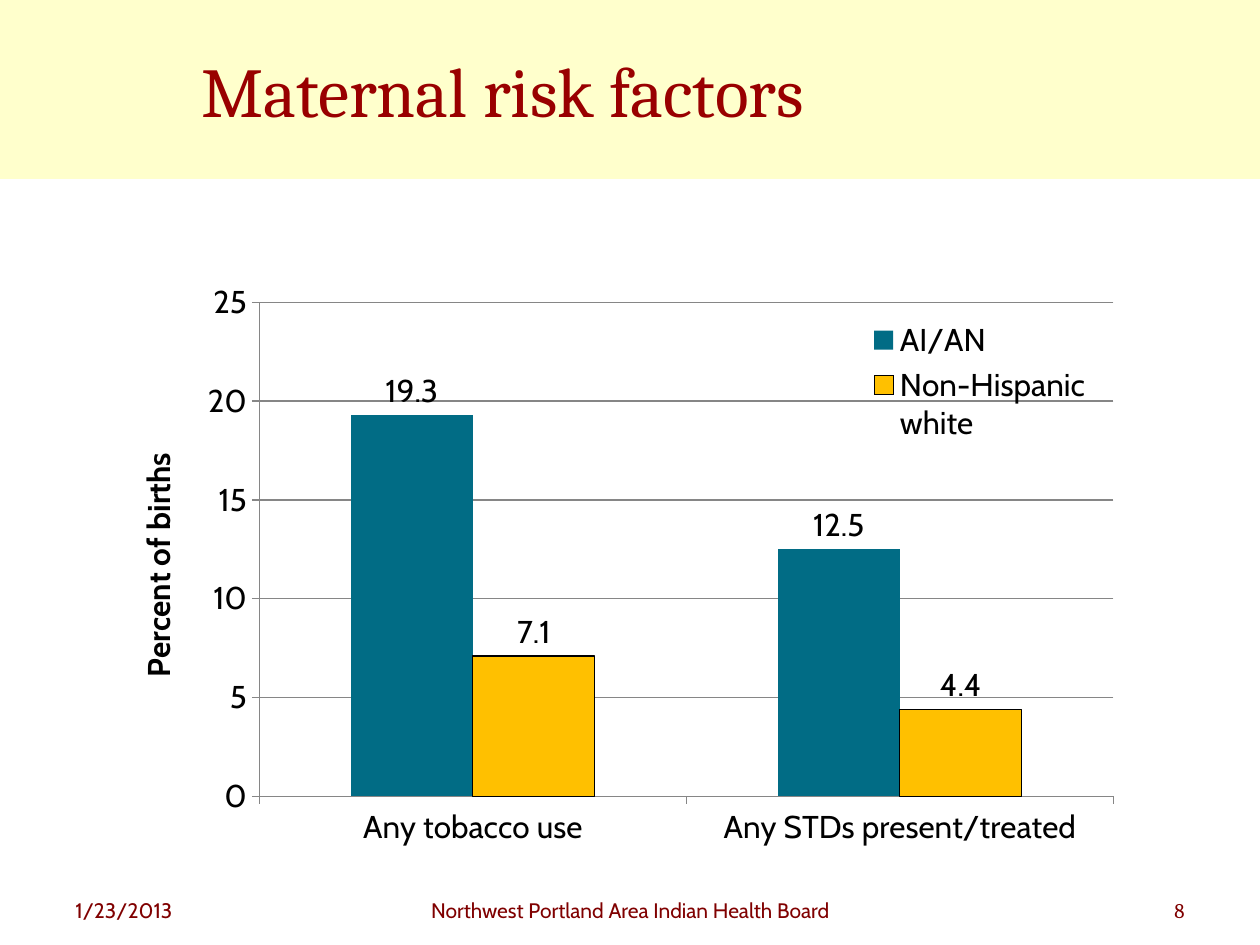
import dataclasses

import pptx
import pptx.chart.data
import pptx.dml.color
import pptx.enum.chart
import pptx.enum.shapes
import pptx.enum.text
import pptx.oxml
import pptx.oxml.ns
import pptx.util

PX_PER_INCH = 126
ALIGN = pptx.enum.text.PP_ALIGN
ANCHOR = pptx.enum.text.MSO_ANCHOR
CHART = pptx.enum.chart


@dataclasses.dataclass(frozen=True)
class Theme:
    band: str = "FFFFCC"
    title: str = "990000"
    footer: str = "800000"
    ink: str = "000000"
    grid: str = "868686"
    native: str = "016C85"
    white: str = "FFC000"
    heading_font: str = "Cambria"
    body_font: str = "Cabin"
    title_size: int = 40
    chart_size: int = 18
    footer_size: int = 12


THEME = Theme()


def px(length):
    return pptx.util.Emu(round(length * 914400 / PX_PER_INCH))


def rgb(value):
    return pptx.dml.color.RGBColor.from_string(value)


def set_all(target, values):
    for name, value in values.items():
        setattr(target, name, value)


def style_font(font, face, size, color, bold=False):
    set_all(font, {"name": face, "size": pptx.util.Pt(size), "bold": bold})
    font.color.rgb = rgb(color)


def style_line(line, color):
    line.color.rgb = rgb(color)
    line.width = pptx.util.Pt(0.75)


def add_band(slide, box):
    band = slide.shapes.add_shape(
        pptx.enum.shapes.MSO_SHAPE.RECTANGLE, *map(px, box))
    band.shadow.inherit = False
    band.fill.solid()
    band.fill.fore_color.rgb = rgb(THEME.band)
    band.line.fill.background()


def add_text(slide, box, text, face, size, color,
             align=ALIGN.LEFT, anchor=ANCHOR.TOP):
    frame = slide.shapes.add_textbox(*map(px, box)).text_frame
    set_all(frame, {"word_wrap": True, "vertical_anchor": anchor})
    paragraph = frame.paragraphs[0]
    set_all(paragraph, {"text": text, "alignment": align})
    style_font(paragraph.runs[0].font, face, size, color)


def place(part, index, x, y, w, h, inner=False):
    """Give a chart part a fixed place, as fractions of the chart."""
    for old in part.findall(pptx.oxml.ns.qn("c:layout")):
        part.remove(old)
    values = {"xMode": "edge", "yMode": "edge", "x": x, "y": y, "w": w, "h": h}
    if inner:
        values = {"layoutTarget": "inner", **values}
    fields = "".join(f'<c:{k} val="{v}"/>' for k, v in values.items())
    part.insert(index, pptx.oxml.parse_xml(
        f'<c:layout {pptx.oxml.ns.nsdecls("c")}>'
        f'<c:manualLayout>{fields}</c:manualLayout></c:layout>'))


def style_axes(chart):
    percent, factors = chart.value_axis, chart.category_axis
    for axis in (percent, factors):
        set_all(axis, {"major_tick_mark": CHART.XL_TICK_MARK.OUTSIDE,
                       "minor_tick_mark": CHART.XL_TICK_MARK.NONE})
        style_line(axis.format.line, THEME.grid)
    set_all(percent, {"minimum_scale": 0, "maximum_scale": 25,
                      "major_unit": 5, "has_major_gridlines": True})
    style_line(percent.major_gridlines.format.line, THEME.grid)
    set_all(percent.tick_labels, {"number_format": "0",
                                  "number_format_is_linked": False})
    caption = percent.axis_title.text_frame.paragraphs[0]
    caption.text = "Percent of births"
    style_font(caption.runs[0].font, THEME.body_font, THEME.chart_size,
               THEME.ink, bold=True)


def style_series(series, color, outline):
    series.invert_if_negative = False
    series.format.fill.solid()
    series.format.fill.fore_color.rgb = rgb(color)
    if outline:
        style_line(series.format.line, outline)
    else:
        series.format.line.fill.background()
    set_all(series.data_labels, {
        "show_value": True, "number_format": "0.0",
        "number_format_is_linked": False,
        "position": CHART.XL_LABEL_POSITION.OUTSIDE_END})


def add_risk_chart(slide, box):
    groups = [("AI/AN", (19.3, 12.5), THEME.native, None),
              ("Non-Hispanic white", (7.1, 4.4), THEME.white, THEME.ink)]
    births = pptx.chart.data.CategoryChartData(number_format="0.0")
    births.categories = ["Any tobacco use", "Any STDs present/treated"]
    for name, values, _, _ in groups:
        births.add_series(name, values)
    chart = slide.shapes.add_chart(
        CHART.XL_CHART_TYPE.COLUMN_CLUSTERED, *map(px, box), births).chart
    set_all(chart, {"has_title": False, "has_legend": True})
    style_font(chart.font, THEME.body_font, THEME.chart_size, THEME.ink)

    # Columns
    columns = chart.plots[0]
    set_all(columns, {"gap_width": 150, "overlap": 0,
                      "vary_by_categories": False})
    for series, (_, _, color, outline) in zip(columns.series, groups):
        style_series(series, color, outline)
    style_axes(chart)

    # Legend over the plot
    set_all(chart.legend, {"position": CHART.XL_LEGEND_POSITION.RIGHT,
                           "include_in_layout": True})
    legend = chart.element.find(".//" + pptx.oxml.ns.qn("c:legend"))
    place(legend, 1, 0.73, 0.07, 0.24, 0.23)
    plot_area = chart.element.find(".//" + pptx.oxml.ns.qn("c:plotArea"))
    place(plot_area, 0, 0.15, 0.05, 0.83, 0.84, inner=True)


def main():
    deck = pptx.Presentation()
    set_all(deck, {"slide_width": px(1260), "slide_height": px(945)})
    slide = deck.slides.add_slide(deck.slide_layouts[6])

    # Heading
    add_band(slide, (0, 0, 1260, 179))
    add_text(slide, (189, 10, 1008, 158), "Maternal risk factors",
             THEME.heading_font, THEME.title_size, THEME.title,
             anchor=ANCHOR.MIDDLE)

    # Chart
    add_risk_chart(slide, (105, 273, 1029, 588))

    # Footer
    footer = [
        (63, 294, "1/23/2013", THEME.body_font, ALIGN.LEFT),
        (368, 525, "Northwest Portland Area Indian Health Board",
         THEME.body_font, ALIGN.CENTER),
        (903, 294, "8", THEME.heading_font, ALIGN.RIGHT),
    ]
    for left, width, text, face, align in footer:
        add_text(slide, (left, 891, width, 54), text, face,
                 THEME.footer_size, THEME.footer, align)

    deck.save("out.pptx")


if __name__ == "__main__":
    main()
